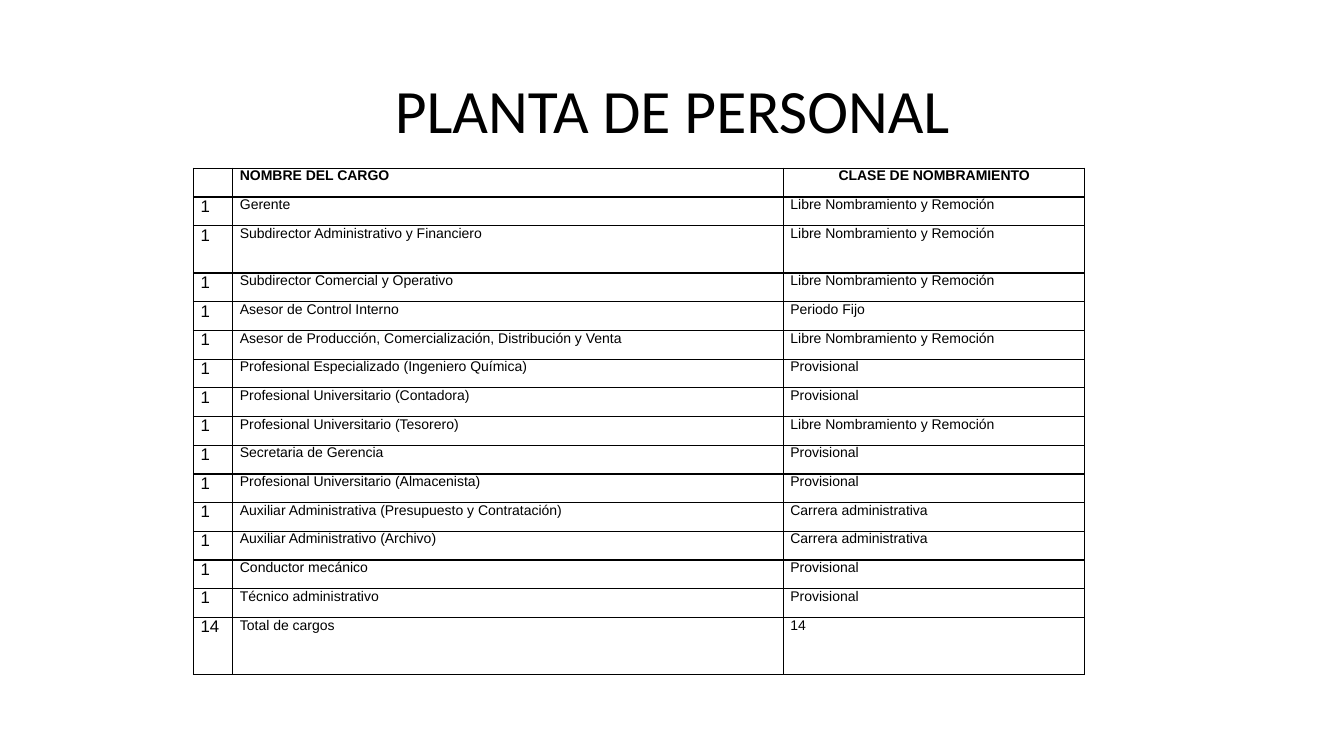
"""Build the staffing table slide."""
from dataclasses import dataclass

from pptx import Presentation
from pptx import util as u
from pptx.dml import color
from pptx.enum import text
from pptx.oxml import parse_xml
from pptx.oxml import ns


@dataclass(frozen=True)
class Theme:
    ink: str = "000000"
    title_font: str = "Calibri"
    table_font: str = "Arial"
    title_size: float = 44
    count_size: float = 12
    body_size: float = 10
    border: float = 1


@dataclass(frozen=True)
class Area:
    left: float
    top: float
    width: float
    height: float


@dataclass(frozen=True)
class Post:
    count: str
    name: str
    appointment: str
    height: float | None = None


THEME = Theme()
SLIDE_WIDTH, SLIDE_HEIGHT = 13.33, 7.5
TITLE_AREA = Area(0.92, 0.4, 11.5, 1.45)
TABLE_AREA = Area(1.92, 1.67, 8.84, 5.03)
COLUMNS = (0.39, 5.46, 2.99)
SIDE_MARGIN = 0.07

FREE = "Libre Nombramiento y Remoción"
PROVISIONAL = "Provisional"
CAREER = "Carrera administrativa"

POSTS = (
    Post("", "NOMBRE DEL CARGO", "CLASE DE NOMBRAMIENTO"),
    Post("1", "Gerente", FREE),
    Post("1", "Subdirector Administrativo y Financiero", FREE, 0.47),
    Post("1", "Subdirector Comercial y Operativo", FREE),
    Post("1", "Asesor de Control Interno", "Periodo Fijo"),
    Post("1", "Asesor de Producción, Comercialización, Distribución y Venta", FREE),
    Post("1", "Profesional Especializado (Ingeniero Química)", PROVISIONAL),
    Post("1", "Profesional Universitario (Contadora)", PROVISIONAL),
    Post("1", "Profesional Universitario (Tesorero)", FREE),
    Post("1", "Secretaria de Gerencia", PROVISIONAL),
    Post("1", "Profesional Universitario (Almacenista)", PROVISIONAL),
    Post("1", "Auxiliar Administrativa (Presupuesto y Contratación)", CAREER),
    Post("1", "Auxiliar Administrativo (Archivo)", CAREER),
    Post("1", "Conductor mecánico", PROVISIONAL),
    Post("1", "Técnico administrativo", PROVISIONAL),
    Post("14", "Total de cargos", "14", 0.57),
)


def place(area: Area) -> tuple:
    return tuple(u.Inches(n) for n in (area.left, area.top, area.width, area.height))


def style(para, font: str, size: float, bold: bool = False) -> None:
    for span in para.runs:
        span.font.name = font
        span.font.size = u.Pt(size)
        span.font.bold = bold
        span.font.color.rgb = color.RGBColor.from_string(THEME.ink)
    if not para.runs:
        para._p.get_or_add_endParaRPr().set("sz", str(int(size * 100)))


def add_borders(cell) -> None:
    properties = cell._tc.get_or_add_tcPr()
    for side in "LRTB":
        properties.append(parse_xml(
            f'<a:ln{side} {ns.nsdecls("a")} w="{u.Pt(THEME.border)}">'
            f'<a:solidFill><a:srgbClr val="{THEME.ink}"/></a:solidFill></a:ln{side}>'))


def add_title(page, title: str) -> None:
    box = page.shapes.add_textbox(*place(TITLE_AREA))
    frame = box.text_frame
    frame.word_wrap = True
    frame.vertical_anchor = text.MSO_ANCHOR.MIDDLE
    frame.text = title
    para = frame.paragraphs[0]
    para.alignment = text.PP_ALIGN.CENTER
    para.line_spacing = 0.9
    style(para, THEME.title_font, THEME.title_size)


def fill_cell(cell, words: str, size: float, header: bool, centred: bool) -> None:
    cell.margin_left = cell.margin_right = u.Inches(SIDE_MARGIN)
    cell.margin_top = cell.margin_bottom = 0
    cell.text_frame.text = words
    para = cell.text_frame.paragraphs[0]
    para.alignment = text.PP_ALIGN.CENTER if centred else text.PP_ALIGN.LEFT
    style(para, THEME.table_font, size, header)
    add_borders(cell)
    cell.fill.background()


def add_staff_table(page, posts: tuple[Post, ...]) -> None:
    table = page.shapes.add_table(len(posts), len(COLUMNS), *place(TABLE_AREA)).table
    table.first_row = table.horz_banding = False
    for column, width in zip(table.columns, COLUMNS):
        column.width = u.Inches(width)
    tall = [post.height for post in posts if post.height]
    regular = (TABLE_AREA.height - sum(tall)) / (len(posts) - len(tall))
    for index, post in enumerate(posts):
        table.rows[index].height = u.Inches(post.height or regular)
        header = index == 0
        for col, words in enumerate((post.count, post.name, post.appointment)):
            size = THEME.body_size if col else THEME.count_size
            fill_cell(table.cell(index, col), words, size, header, header and col == 2)


def main() -> None:
    deck = Presentation()
    deck.slide_width = u.Inches(SLIDE_WIDTH)
    deck.slide_height = u.Inches(SLIDE_HEIGHT)
    page = deck.slides.add_slide(deck.slide_layouts[6])
    add_title(page, "PLANTA DE PERSONAL")
    add_staff_table(page, POSTS)
    deck.save("out.pptx")


if __name__ == "__main__":
    main()
